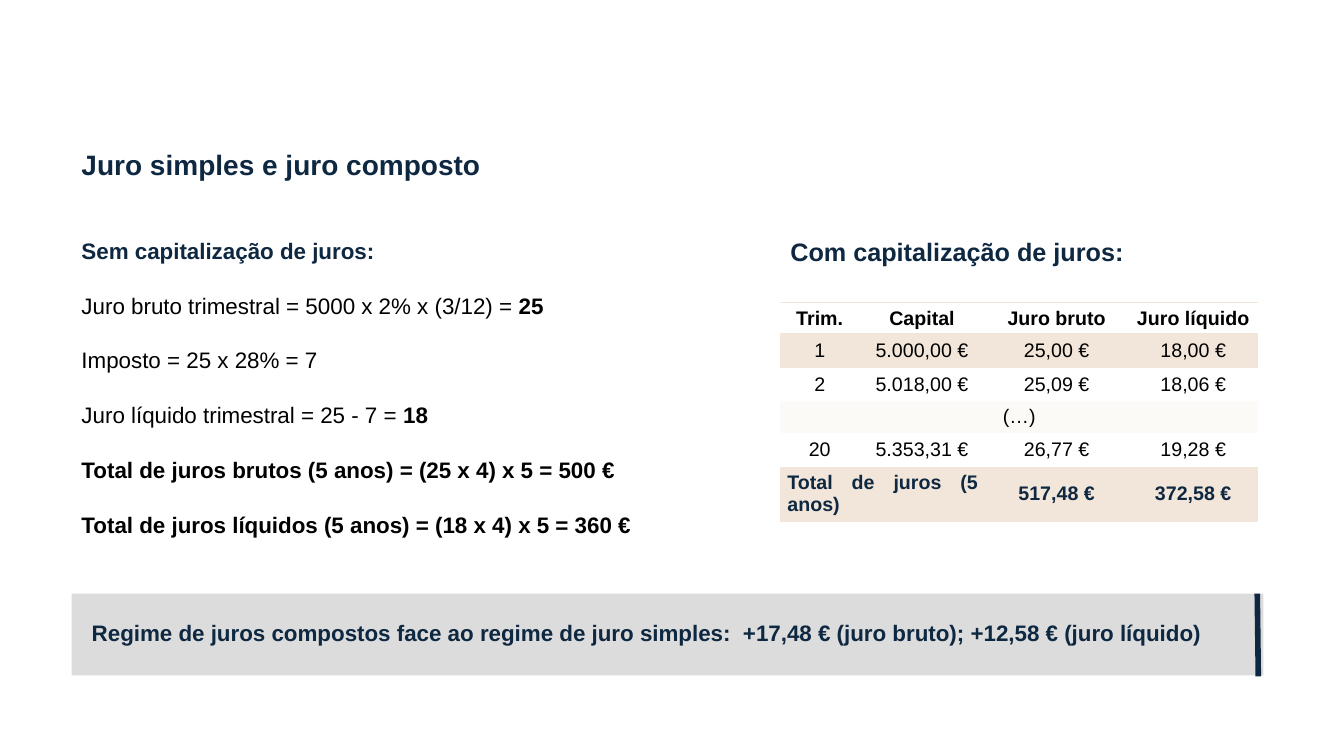
import pptx
import pptx.util
import pptx.dml.color
import pptx.enum.shapes
import pptx.enum.text
import pptx.oxml
import pptx.oxml.ns

Inches = pptx.util.Inches
Pt = pptx.util.Pt
ALIGN = pptx.enum.text.PP_ALIGN
MIDDLE = pptx.enum.text.MSO_ANCHOR.MIDDLE

COLORS = {"navy": "0E2841", "black": "000000", "gray": "DCDCDC", "sand": "F2E6DA"}
BAND_ALPHA = 20
COL_WIDTHS = [0.78, 1.25, 1.42, 1.29]
ROW_HEIGHTS = [0.31] * 5 + [0.4]

SIMPLE_INTEREST = [
    [("Sem capitalização de juros:", "navy", True)],
    [("Juro bruto trimestral = 5000 x 2% x (3/12) = ", "black", False), ("25", "black", True)],
    [("Imposto = 25 x 28% = 7", "black", False)],
    [("Juro líquido trimestral = 25 - 7 = ", "black", False), ("18", "black", True)],
    [("Total de juros brutos (5 anos) = (25 x 4) x 5 = 500 €", "black", True)],
    [("Total de juros líquidos (5 anos) = (18 x 4) x 5 = 360 €", "black", True)],
]
COMPOUND_INTEREST = [
    ["Trim.", "Capital", "Juro bruto", "Juro líquido"],
    ["1", "5.000,00 €", "25,00 €", "18,00 €"],
    ["2", "5.018,00 €", "25,09 €", "18,06 €"],
    ["(…)", "", "", ""],
    ["20", "5.353,31 €", "26,77 €", "19,28 €"],
    ["Total de juros (5 anos)", "", "517,48 €", "372,58 €"],
]


def rgb(name):
    return pptx.dml.color.RGBColor.from_string(COLORS[name])


def set_attrs(obj, values):
    for name, value in values.items():
        setattr(obj, name, value)


def write_paragraphs(tf, paragraphs, size, **formats):
    """Fill tf with paragraphs, each a list of (text, colour, bold) runs."""
    for i, runs in enumerate(paragraphs):
        p = tf.add_paragraph() if i else tf.paragraphs[0]
        set_attrs(p, formats)
        if i == 0:
            p.space_before = Pt(0)
        for text, color, bold in runs:
            r = p.add_run()
            r.text = text
            set_attrs(r.font, {"name": "Arial", "size": Pt(size), "bold": bold})
            r.font.color.rgb = rgb(color)


def add_text(s, box, paragraphs, size, **formats):
    tf = s.shapes.add_textbox(*map(Inches, box)).text_frame
    tf.word_wrap = True
    write_paragraphs(tf, paragraphs, size, **formats)


def add_conclusion(s, text):
    sp = s.shapes.add_shape(pptx.enum.shapes.MSO_SHAPE.RECTANGLE,
                            Inches(0.71), Inches(5.89), Inches(11.82), Inches(0.81))
    sp.shadow.inherit = False
    sp.fill.solid()
    sp.fill.fore_color.rgb = rgb("gray")
    sp.line.fill.background()
    tf = sp.text_frame
    set_attrs(tf, {"word_wrap": True, "vertical_anchor": MIDDLE})
    set_attrs(tf, {f"margin_{side}": Inches(0.2) for side in ("left", "top", "right", "bottom")})
    write_paragraphs(tf, [[(text, "navy", True)]], 16, alignment=ALIGN.LEFT, line_spacing=0.9)

    line = s.shapes.add_connector(pptx.enum.shapes.MSO_CONNECTOR.STRAIGHT,
                                  Inches(12.47), Inches(5.89), Inches(12.48), Inches(6.71))
    line.line.color.rgb = rgb("navy")
    line.line.width = Pt(4)
    line._element.spPr.append(pptx.oxml.parse_xml(
        f'<a:effectLst {pptx.oxml.ns.nsdecls("a")}/>'))


def set_borders(cell, visible):
    tcPr = cell._tc.get_or_add_tcPr()
    for side in "LRTB":
        fill = "<a:noFill/>"
        if side in visible:
            fill = f'<a:solidFill><a:srgbClr val="{COLORS["sand"]}"/></a:solidFill>'
        tcPr.append(pptx.oxml.parse_xml(
            f'<a:ln{side} {pptx.oxml.ns.nsdecls("a")} w="{Pt(1)}">{fill}</a:ln{side}>'))


def fill_cell(cell, banded):
    if not banded:
        cell.fill.background()
        return
    cell.fill.solid()
    cell.fill.fore_color.rgb = rgb("sand")
    color = cell._tc.tcPr.find(".//" + pptx.oxml.ns.qn("a:srgbClr"))
    color.append(pptx.oxml.parse_xml(
        f'<a:alpha {pptx.oxml.ns.nsdecls("a")} val="{BAND_ALPHA * 1000}"/>'))


def add_interest_table(s, rows):
    last = len(rows) - 1
    table = s.shapes.add_table(len(rows), len(COL_WIDTHS), Inches(7.74), Inches(3),
                               Inches(sum(COL_WIDTHS)), Inches(sum(ROW_HEIGHTS))).table
    set_attrs(table, {"first_row": False, "horz_banding": False})
    for column, width in zip(table.columns, COL_WIDTHS):
        column.width = Inches(width)
    for row, height in zip(table.rows, ROW_HEIGHTS):
        row.height = Inches(height)
    table.cell(3, 0).merge(table.cell(3, 3))
    table.cell(last, 0).merge(table.cell(last, 1))

    borders = {0: "TB", 1: "T", last: "B"}
    for i, values in enumerate(rows):
        for j, text in enumerate(values):
            cell = table.cell(i, j)
            set_borders(cell, borders.get(i, ""))
            fill_cell(cell, i % 2 == 1)
            cell.vertical_anchor = MIDDLE
            if i == 0 or j == 0:
                set_attrs(cell, {"margin_left": Inches(0.07), "margin_right": Inches(0.07),
                                 "margin_top": Inches(0.04), "margin_bottom": Inches(0.04)})
            if text:
                run = (text, "navy" if i == last else "black", i in (0, last))
                align = ALIGN.JUSTIFY if (i, j) == (last, 0) else ALIGN.CENTER
                write_paragraphs(cell.text_frame, [[run]], 14, alignment=align)


def main():
    prs = pptx.Presentation()
    prs.slide_width, prs.slide_height = Inches(13.33), Inches(7.5)
    s = prs.slides.add_slide(prs.slide_layouts[6])
    add_text(s, (0.71, 1.37, 11.62, 1.44), [[("Juro simples e juro composto", "navy", True)]], 20,
             line_spacing=1.14, space_after=Pt(10))
    add_text(s, (0.71, 2.3, 6.05, 3.71), SIMPLE_INTEREST, 16,
             space_before=Pt(10), space_after=Pt(10))
    add_conclusion(s, "Regime de juros compostos face ao regime de juro simples:  "
                      "+17,48 € (juro bruto); +12,58 € (juro líquido)")
    add_text(s, (7.74, 2.3, 4.49, 0.4), [[("Com capitalização de juros:", "navy", True)]], 18,
             space_after=Pt(10))
    add_interest_table(s, COMPOUND_INTEREST)
    prs.save("out.pptx")


if __name__ == "__main__":
    main()
